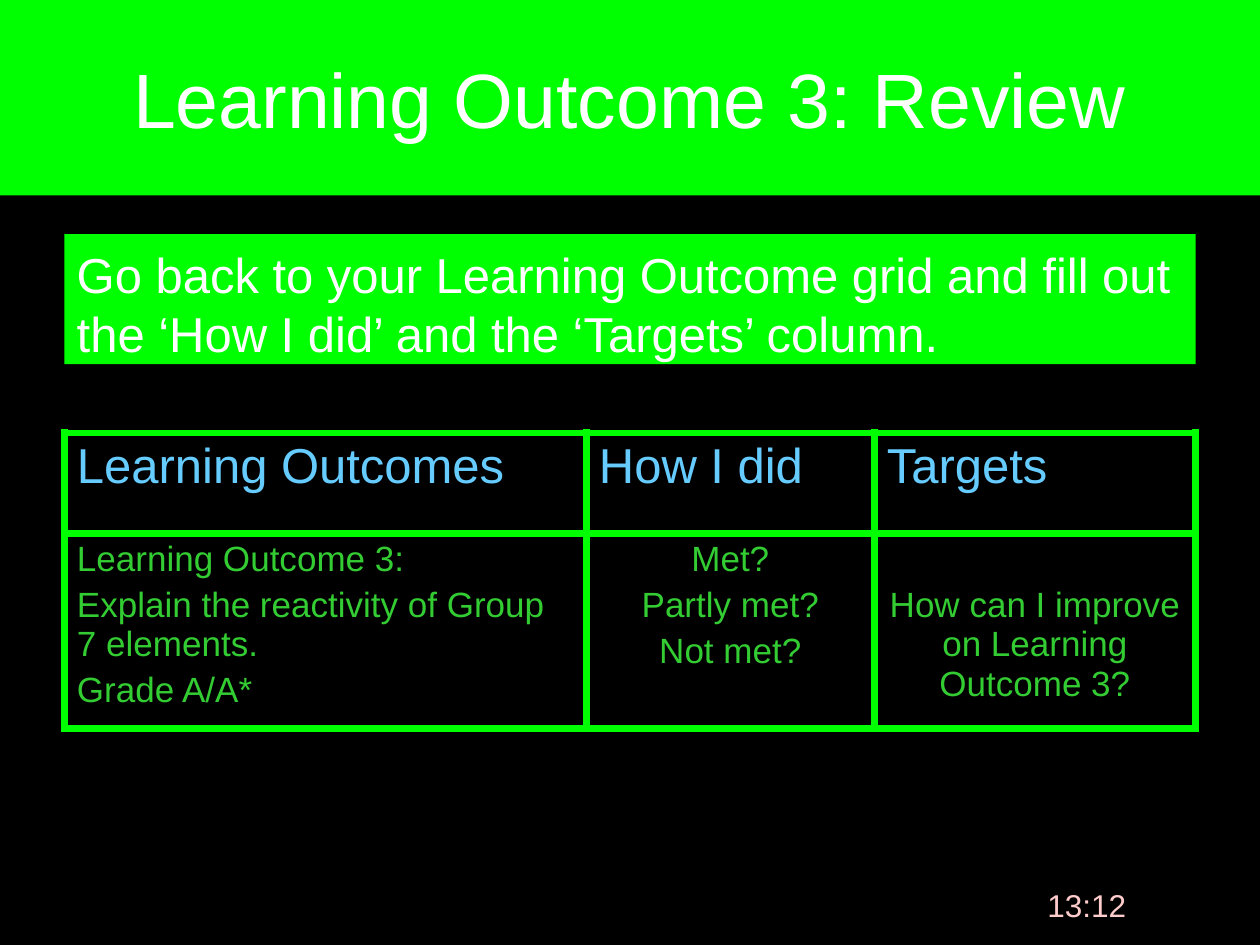
import pptx
import pptx.util
import pptx.dml.color
import pptx.enum.text
import pptx.oxml

Pt = pptx.util.Pt
Align = pptx.enum.text.PP_ALIGN
Anchor = pptx.enum.text.MSO_ANCHOR
GREEN, BLACK, WHITE = "00FF00", "000000", "FFFFFF"
SIDE = (
    '<a:{} xmlns:a="http://schemas.openxmlformats.org/drawingml/2006/main" w="{}">'
    '<a:solidFill><a:srgbClr val="{}"/></a:solidFill></a:{}>'
)


def paint(fill, code):
    fill.solid()
    fill.fore_color.rgb = pptx.dml.color.RGBColor.from_string(code)


def write(frame, lines, size, code, align=Align.LEFT, gap=0):
    """Put one paragraph per line; gap is the space before each, in points."""
    frame.word_wrap = True
    frame.text = "\n".join(lines)
    for para in frame.paragraphs:
        para.alignment = align
        para.space_before = Pt(gap)
        for name, value in {"name": "Arial", "size": Pt(size), "bold": False}.items():
            setattr(para.font, name, value)
        for run in para.runs:
            for name, value in {"name": "Arial", "size": Pt(size)}.items():
                setattr(run.font, name, value)
            paint(run.font.fill, code)


deck = pptx.Presentation()
deck.slide_width, deck.slide_height = Pt(720), Pt(540)
slide = deck.slides.add_slide(deck.slide_layouts[5])
paint(slide.background.fill, BLACK)

# Title band
title = slide.shapes.title
for name, value in {"left": 0, "top": 0, "width": 720, "height": 111.6}.items():
    setattr(title, name, Pt(value))
paint(title.fill, GREEN)
write(title.text_frame, ["Learning Outcome 3: Review"], 44, WHITE, Align.CENTER)
title.text_frame.vertical_anchor = Anchor.MIDDLE

# Task and clock
task = slide.shapes.add_textbox(Pt(36.8), Pt(133.8), Pt(646.4), Pt(74.3))
paint(task.fill, GREEN)
write(
    task.text_frame,
    ["Go back to your Learning Outcome grid and fill out the ‘How I did’ and the ‘Targets’ column."],
    28, WHITE,
)
task.text_frame.margin_top = Pt(6)
clock = slide.shapes.add_textbox(Pt(564.5), Pt(502.6), Pt(113), Pt(37.4))
write(clock.text_frame, ["13:12"], 18, "FFCCCC", Align.CENTER)

# Review grid
heads = ["Learning Outcomes", "How I did", "Targets"]
notes = [
    ["Learning Outcome 3:", "Explain the reactivity of Group 7 elements.", "Grade A/A*"],
    ["Met?", "Partly met?", "Not met?"],
    ["How can I improve on Learning Outcome 3?"],
]
wide, high = [298.3, 164.5, 183.6], [57.6, 104]
grid = slide.shapes.add_table(
    2, 3, Pt(36.8), Pt(247.4), Pt(sum(wide)), Pt(sum(high))
).table
for row, size in zip(grid.rows, high):
    row.height = Pt(size)
for col, size in zip(grid.columns, wide):
    col.width = Pt(size)

for index, (head, note) in enumerate(zip(heads, notes)):
    top, low = grid.cell(0, index), grid.cell(1, index)
    write(top.text_frame, [head], 28, "66CCFF", gap=5.6)
    align = Align.CENTER if index else Align.LEFT
    write(low.text_frame, note, 20, "33CC33", align, gap=4)
    for cell in (top, low):
        props = cell._tc.get_or_add_tcPr()
        for side in ("lnL", "lnR", "lnT", "lnB"):
            props.append(pptx.oxml.parse_xml(SIDE.format(side, Pt(4.5), GREEN, side)))
        paint(cell.fill, BLACK)
grid.cell(1, 2).margin_top = Pt(30)

deck.save("out.pptx")
